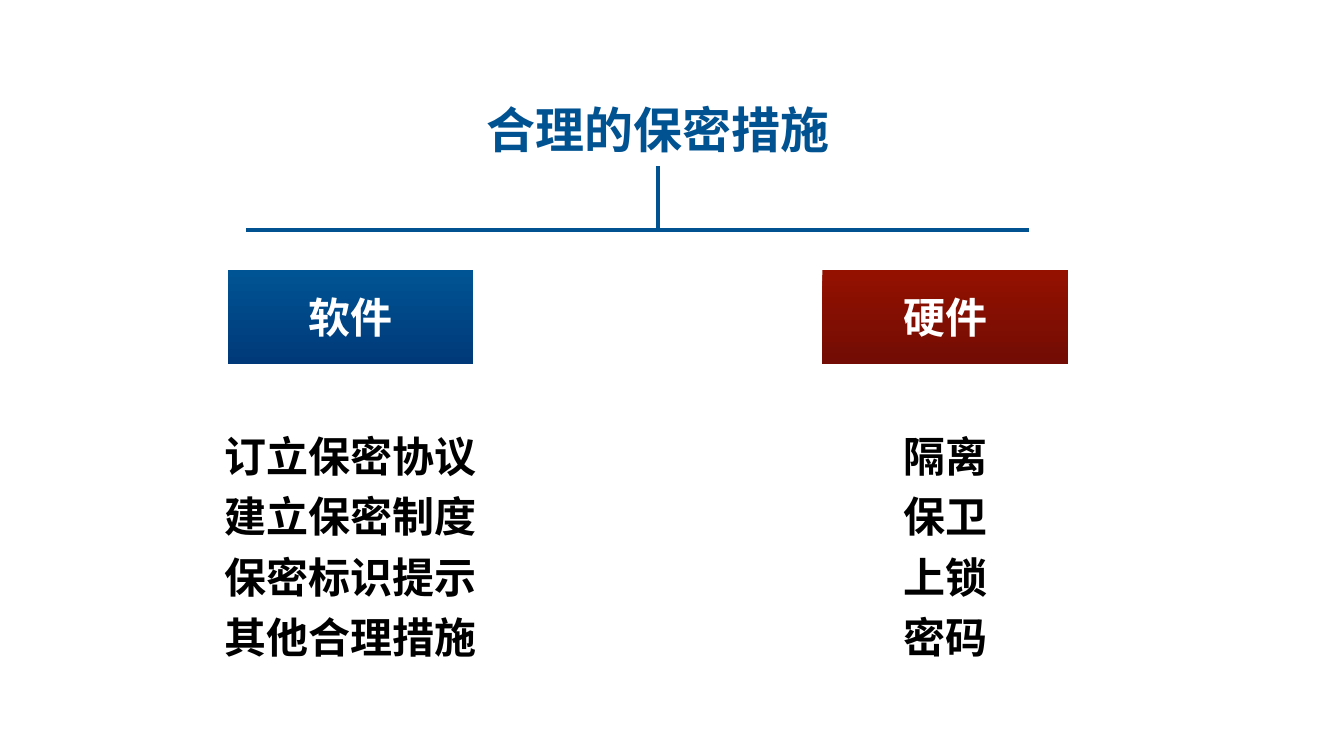
from dataclasses import dataclass

from lxml import etree
from pptx import Presentation
from pptx import util as u
from pptx.dml.color import RGBColor
from pptx.enum import shapes, text
from pptx.oxml import ns


@dataclass(frozen=True)
class Theme:
    font: str = "Arial"
    blue: str = "005291"
    ink: str = "000000"
    white: str = "FFFFFF"
    soft: tuple = ("005493", "00397A")
    hard: tuple = ("941100", "720C04")
    head: int = 70
    body: int = 60
    rule: int = 6


T = Theme()


def write(shape, lines, size, color, pad=0.08, wrap=True, gap=1.0):
    """Fill a shape with centred bold lines."""
    frame = shape.text_frame
    inset = u.Inches(pad)
    look = {"word_wrap": wrap, "vertical_anchor": text.MSO_ANCHOR.MIDDLE,
            "margin_left": inset, "margin_right": inset,
            "margin_top": inset, "margin_bottom": inset}
    for key, value in look.items():
        setattr(frame, key, value)
    for i, line in enumerate(lines):
        para = frame.add_paragraph() if i else frame.paragraphs[0]
        para.alignment = text.PP_ALIGN.CENTER
        para.line_spacing = gap
        run = para.add_run()
        run.text = line
        style = {"name": T.font, "size": u.Pt(size), "bold": True}
        for key, value in style.items():
            setattr(run.font, key, value)
        run.font.color.rgb = RGBColor.from_string(color)


def title(slide, box, words):
    shape = slide.shapes.add_textbox(*map(u.Inches, box))
    write(shape, [words], T.head, T.blue, pad=0.04)


def label(slide, box, words, shades):
    """Add a heading bar shaded from top to bottom."""
    bar = slide.shapes.add_shape(shapes.MSO_SHAPE.RECTANGLE,
                                 *map(u.Inches, box))
    bar.shadow.inherit = False
    bar.line.fill.background()
    bar.fill.gradient()
    bar.fill.gradient_angle = 270
    for stop, shade, place in zip(bar.fill.gradient_stops, shades, (0, 1)):
        stop.color.rgb = RGBColor.from_string(shade)
        stop.position = place
    write(bar, [words], T.body, T.white)


def points(slide, box, lines):
    shape = slide.shapes.add_textbox(*map(u.Inches, box))
    write(shape, lines, T.body, T.ink, wrap=False, gap=1.2)


def fork(slide, box, stem):
    """Draw a stem from the top of the box to a rule along its foot."""
    x, y, w, h = box
    foot = y + h
    for ends in ((x, foot, x + w, foot), (stem, foot, stem, y)):
        line = slide.shapes.add_connector(shapes.MSO_CONNECTOR.STRAIGHT,
                                          *map(u.Inches, ends))
        line.line.color.rgb = RGBColor.from_string(T.blue)
        line.line.width = u.Pt(T.rule)
        etree.SubElement(line._element.spPr, ns.qn("a:effectLst"))


def main():
    deck = Presentation()
    deck.slide_width, deck.slide_height = u.Inches(26.67), u.Inches(15)
    slide = deck.slides.add_slide(deck.slide_layouts[6])

    title(slide, (7.96, 1.84, 10.19, 1.43), "合理的保密措施")
    fork(slide, (4.89, 3.3, 15.52, 1.26), 13.05)
    groups = (
        ("软件", 4.52, T.soft, (4.35, 8.24, 5.21, 5),
         ("订立保密协议", "建立保密制度", "保密标识提示", "其他合理措施")),
        ("硬件", 16.32, T.hard, (17.72, 7.98, 2.07, 5.52),
         ("隔离", "保卫", "上锁", "密码")),
    )
    for name, left, shades, box, lines in groups:
        label(slide, (left, 5.35, 4.87, 1.87), name, shades)
        points(slide, box, lines)

    deck.save("out.pptx")


if __name__ == "__main__":
    main()
